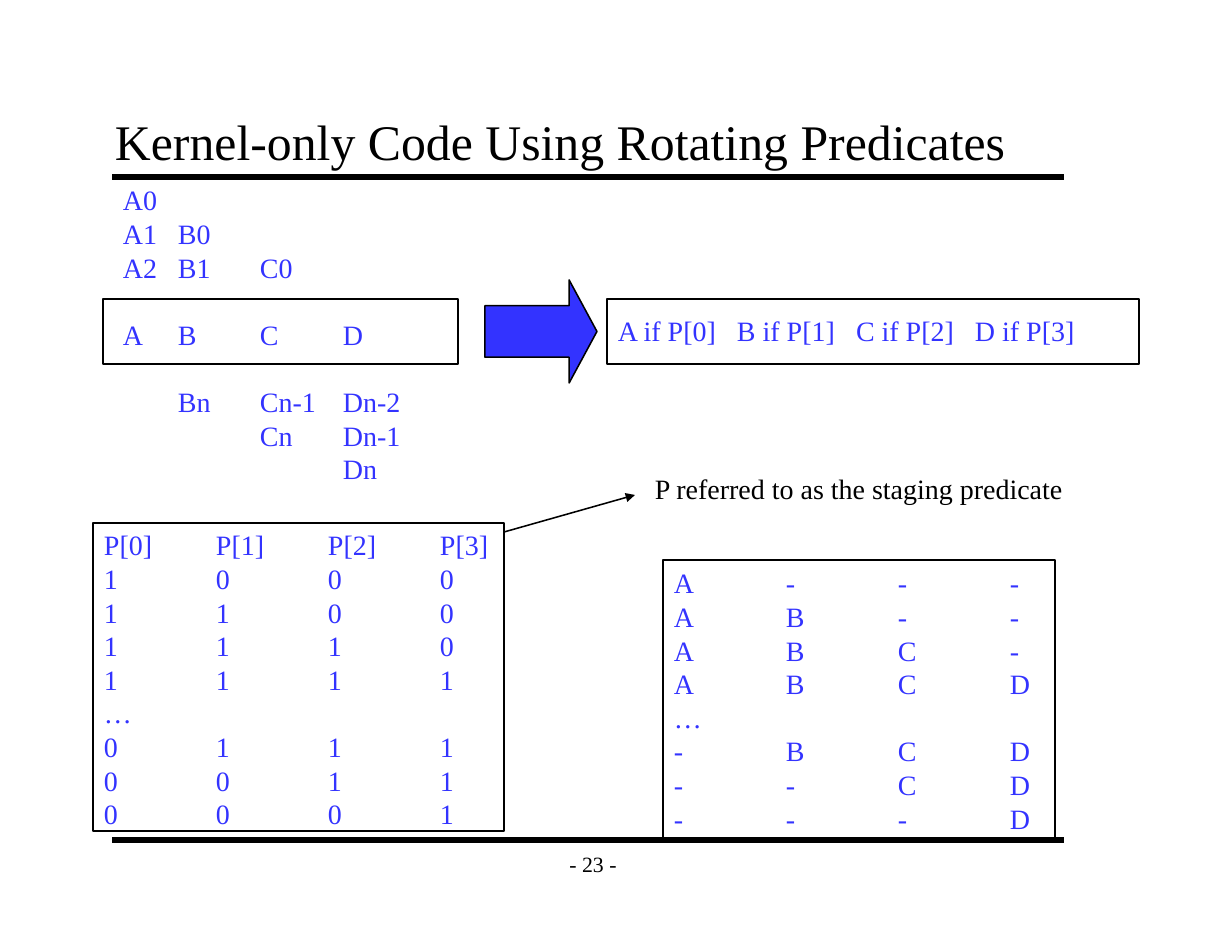
from lxml import etree
from pptx import Presentation
from pptx.dml.color import RGBColor
from pptx.enum.shapes import MSO_CONNECTOR, MSO_SHAPE
from pptx.enum.text import MSO_ANCHOR, MSO_AUTO_SIZE, PP_ALIGN
from pptx.oxml.ns import qn
from pptx.util import Emu, Pt

STRAIGHT = MSO_CONNECTOR.STRAIGHT
RECTANGLE, RIGHT_ARROW = MSO_SHAPE.RECTANGLE, MSO_SHAPE.RIGHT_ARROW
MIDDLE, BOTTOM, TOP = MSO_ANCHOR.MIDDLE, MSO_ANCHOR.BOTTOM, MSO_ANCHOR.TOP
LEFT, CENTER = PP_ALIGN.LEFT, PP_ALIGN.CENTER
NO_AUTOSIZE = MSO_AUTO_SIZE.NONE

SCALE = 914400 / 112
FONT = "Times New Roman"
BLACK, BLUE = "000000", "3333FF"
LINE_PITCH = Pt(21.6)

TITLE = "Kernel-only Code Using Rotating Predicates"
PAGE = "- 23 -"
NOTE = "P referred to as the staging predicate"
PIPELINE = [
    ["A0"],
    ["A1", "B0"],
    ["A2", "B1", "C0"],
    ["A", "B", "C", "D"],
    ["", "Bn", "Cn-1", "Dn-2"],
    ["", "", "Cn", "Dn-1"],
    ["", "", "", "Dn"],
]
KERNEL_ROW = 3
KERNEL = [["A if P[0]", "B if P[1]", "C if P[2]", "D if P[3]"]]
PREDICATES = [["P[0]", "P[1]", "P[2]", "P[3]"]] + [
    list(row) for row in ("1000", "1100", "1110", "1111", "…", "0111", "0011", "0001")
]
STAGES = [list(row) for row in
          ("A---", "AB--", "ABC-", "ABCD", "…", "-BCD", "--CD", "---D")]

EVEN_TABS = [112, 224, 336]
BLOCKS = [
    (PIPELINE, (112, 177, 340, 314), [55, 137, 220], (KERNEL_ROW, KERNEL_ROW + 1), BLUE),
    (PREDICATES, (93, 522, 411, 314), EVEN_TABS, (), BLUE),
    (KERNEL, (607, 308, 532, 45), [119, 238, 357], (), BLUE),
    (STAGES, (663, 560, 392, 280), EVEN_TABS, (), BLUE),
    ([[NOTE]], (644, 466, 439, 45), [], (), BLACK),
]
FRAMES = [
    (103, 299, 355, 65),
    (93, 523, 411, 308),
    (607, 299, 532, 65),
    (663, 560, 392, 280),
]
RULES = [(112, 177, 1064, 177), (112, 840, 1064, 840)]
ARROW = (485, 280, 112, 103)
POINTER = (504, 532, 635, 495)


def px(*lengths):
    return [Emu(round(length * SCALE)) for length in lengths]


def colour(value):
    return RGBColor.from_string(value)


def apply(target, values):
    for key, value in values.items():
        setattr(target, key, value)


def set_frame(frame, anchor=TOP, inset_x=11, inset_y=6):
    side, edge = px(inset_x, inset_y)
    apply(frame, {
        "word_wrap": True, "auto_size": NO_AUTOSIZE, "vertical_anchor": anchor,
        "margin_left": side, "margin_right": side,
        "margin_top": edge, "margin_bottom": edge,
    })


def write(paragraph, words, size, ink, align=LEFT):
    run = paragraph.add_run()
    run.text = words
    apply(run.font, {"name": FONT, "size": Pt(size), "bold": False})
    run.font.color.rgb = colour(ink)
    paragraph.alignment = align


def set_tabs(paragraph, stops):
    tab_list = etree.SubElement(paragraph._p.get_or_add_pPr(), qn("a:tabLst"))
    for stop in px(*stops):
        etree.SubElement(tab_list, qn("a:tab"), pos=str(int(stop)), algn="l")


def add_block(shapes, rows, box, stops, gaps, ink):
    frame = shapes.add_textbox(*px(*box)).text_frame
    set_frame(frame)
    for index, row in enumerate(rows):
        paragraph = frame.add_paragraph() if index else frame.paragraphs[0]
        write(paragraph, "\t".join(row), 18, ink)
        apply(paragraph, {
            "line_spacing": LINE_PITCH,
            "space_before": LINE_PITCH if index in gaps else Pt(0),
        })
        if stops:
            set_tabs(paragraph, stops)


def add_line(shapes, ends, width):
    line = shapes.add_connector(STRAIGHT, *px(*ends))
    line.line.color.rgb = colour(BLACK)
    line.line.width = Pt(width)
    etree.SubElement(line._element.spPr, qn("a:effectLst"))
    return line


def add_outlined(shapes, kind, box, fill=None):
    shape = shapes.add_shape(kind, *px(*box))
    shape.shadow.inherit = False
    if fill:
        shape.fill.solid()
        shape.fill.fore_color.rgb = colour(fill)
    else:
        shape.fill.background()
    shape.line.color.rgb = colour(BLACK)
    shape.line.width = Pt(1)
    return shape


def main():
    deck = Presentation()
    deck.slide_width, deck.slide_height = px(1232, 952)
    slide = deck.slides.add_slide(deck.slide_layouts[5])
    shapes = slide.shapes

    title = shapes.title
    apply(title, dict(zip(("left", "top", "width", "height"), px(103, 103, 1027, 75))))
    set_frame(title.text_frame, BOTTOM, 12, 7)
    write(title.text_frame.paragraphs[0], TITLE, 32, BLACK)

    for frame in FRAMES:
        add_outlined(shapes, RECTANGLE, frame)
    for rule in RULES:
        add_line(shapes, rule, 4)
    for block in BLOCKS:
        add_block(shapes, *block)

    arrow = add_outlined(shapes, RIGHT_ARROW, ARROW, BLUE)
    arrow.adjustments[0], arrow.adjustments[1] = 0.5, 0.27

    pointer = add_line(shapes, POINTER, 1)
    etree.SubElement(pointer.line._get_or_add_ln(), qn("a:tailEnd"), type="triangle")

    page = shapes.add_textbox(*px(551, 840, 84, 47)).text_frame
    set_frame(page, MIDDLE)
    write(page.paragraphs[0], PAGE, 14, BLACK, CENTER)

    deck.save("out.pptx")


if __name__ == "__main__":
    main()
